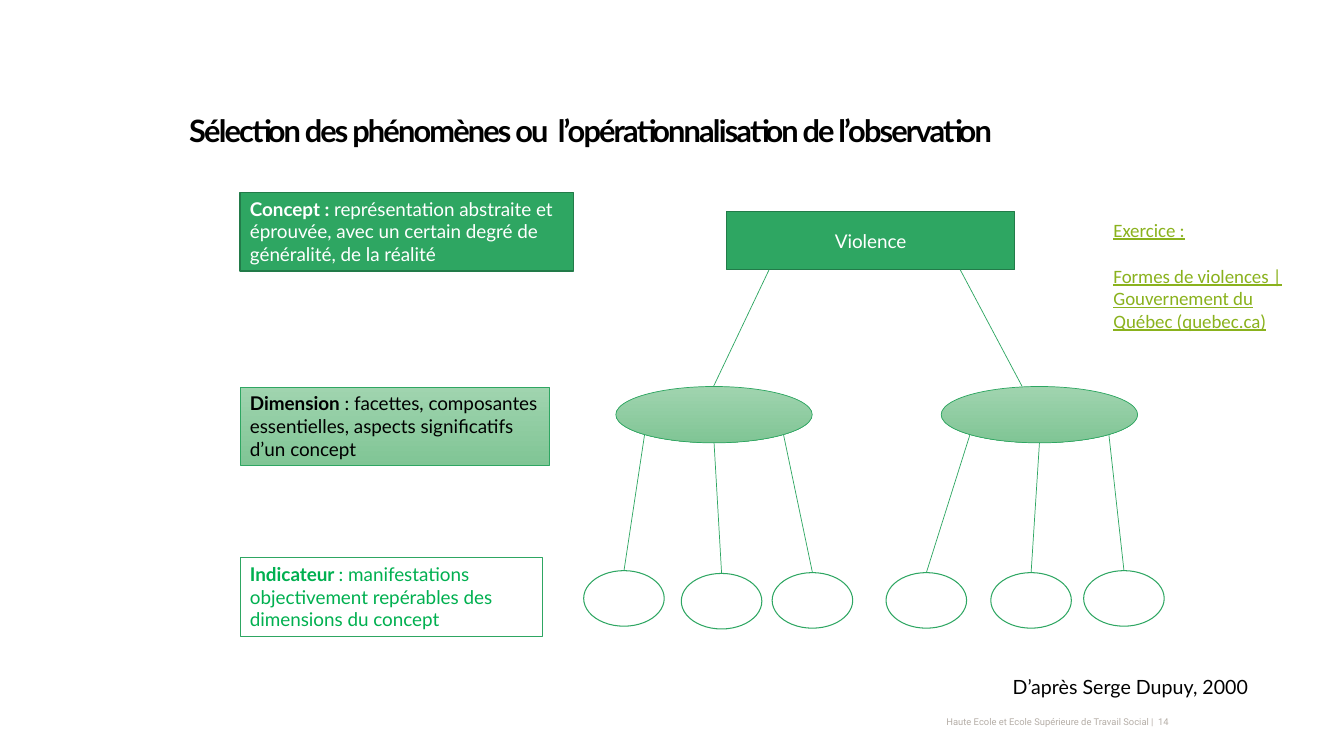
from math import sqrt
from pptx import Presentation
from pptx import util as u
from pptx.dml.color import RGBColor
from pptx.enum import shapes as sh, text as tx
from lxml import etree

THEME = {
    "green": "2EA662", "edge": "227B49", "top": "A0D4AF", "low": "80C595",
    "mark": "00B050", "link": "8AB21D", "pale": "B5AEA7",
    "ink": "000000", "white": "FFFFFF",
    "title": 22, "body": 13.5, "credit": 14, "foot": 6.7,
    "font": "Lato", "linkfont": "Calibri", "footfont": "Roboto",
}
T = THEME

TITLE = "Sélection des phénomènes ou  l’opérationnalisation de l’observation"
LEVELS = [
    ("Concept : ", "représentation abstraite et éprouvée, avec un certain degré de généralité, de la réalité",
     4.85, 8.41, "solid", "white"),
    ("Dimension", " : facettes, composantes essentielles, aspects significatifs d’un concept",
     9.75, 7.8, "fade", "ink"),
    ("Indicateur ", ": manifestations objectivement repérables des dimensions du concept",
     14.05, 7.62, "open", "mark"),
]
ROOT = ("Violence", (18.31, 5.33, 7.26, 1.47))
BRANCHES = [
    {"at": (15.52, 9.74), "stem": (19.38, 17.98),
     "leaves": [(14.71, 14.38), (17.17, 14.45), (19.46, 14.43)]},
    {"at": (23.72, 9.74), "stem": (24.2, 25.76),
     "leaves": [(22.33, 14.43), (24.97, 14.43), (27.31, 14.38)]},
]
EXERCISE = ["Exercice :", "Formes de violences | Gouvernement du Québec (quebec.ca)"]
CREDIT = "D’après Serge Dupuy, 2000"
FOOTER = "Haute Ecole et Ecole Supérieure de Travail Social |  14"
OVAL = (4.95, 1.42)
LEAF = (2.03, 1.4)
LOOKS = {"solid": ("edge", 1), "fade": ("green", 0.5), "open": ("green", 0.75)}

deck = Presentation()
deck.slide_width, deck.slide_height = u.Cm(33.87), u.Cm(19.05)
slide = deck.slides.add_slide(deck.slide_layouts[6])


def hue(name):
    return RGBColor.from_string(T[name])


def write(shape, paras, size="body", color="ink", font="font", align="LEFT",
          anchor="TOP", inset=None, under=None, track=None, gap=0, pitch=None):
    frame = shape.text_frame
    frame.word_wrap = True
    frame.vertical_anchor = tx.MSO_ANCHOR[anchor]
    if inset:
        frame.margin_left = frame.margin_right = u.Cm(inset[0])
        frame.margin_top = frame.margin_bottom = u.Cm(inset[1])
    for i, runs in enumerate(paras):
        para = frame.add_paragraph() if i else frame.paragraphs[0]
        para.alignment = tx.PP_ALIGN[align]
        if i and gap:
            para.space_before = u.Pt(gap)
        if pitch:
            para.line_spacing = u.Pt(pitch)
        for words, bold in runs:
            run = para.add_run()
            run.text = words
            face = run.font
            face.name, face.size, face.bold = T[font], u.Pt(T[size]), bold
            face.underline = under
            face.color.rgb = hue(color)
            if track:
                run._r.get_or_add_rPr().set("spc", str(track))


def label(box, paras, **form):
    write(slide.shapes.add_textbox(*map(u.Cm, box)), paras, **form)


def draw(kind, box, look):
    shape = slide.shapes.add_shape(sh.MSO_SHAPE[kind], *map(u.Cm, box))
    shape.shadow.inherit = False
    if look == "solid":
        shape.fill.solid()
        shape.fill.fore_color.rgb = hue("green")
    elif look == "fade":
        shape.fill.gradient()
        shape.fill.gradient_angle = 270
        for stop, name in zip(shape.fill.gradient_stops, ("top", "low")):
            stop.color.rgb = hue(name)
    else:
        shape.fill.background()
    edge, width = LOOKS[look]
    shape.line.color.rgb = hue(edge)
    shape.line.width = u.Pt(width)
    return shape


def link(start, end):
    line = slide.shapes.add_connector(
        sh.MSO_CONNECTOR.STRAIGHT, *map(u.Cm, start + end))
    line.line.color.rgb = hue("green")
    line.line.width = u.Pt(0.5)
    props = line._element.spPr
    etree.SubElement(props, props.tag.replace("}spPr", "}effectLst").replace(
        "presentationml", "drawingml").replace("2006/main", "2006/main"))


label((4.52, 2.69, 27.08, 2.67), [[(TITLE, True)]], size="title", track=-130)
for head, rest, top, width, look, color in LEVELS:
    write(draw("RECTANGLE", (6.05, top, width, 1.98), look),
          [[(head, True), (rest, False)]], color=color)

name, box = ROOT
write(draw("RECTANGLE", box, "solid"), [[(name, False)]],
      color="white", align="CENTER", anchor="MIDDLE")
base = box[1] + box[3]

for branch in BRANCHES:
    left, top = branch["at"]
    wide, high = OVAL
    draw("OVAL", (left, top, wide, high), "fade")
    near, far = branch["stem"]
    link((near, base), (far, top))
    for side, (x, y) in zip((-1, 0, 1), branch["leaves"]):
        draw("OVAL", (x, y) + LEAF, "open")
        drop = 1 / sqrt(2) if side else 1
        start = (left + wide / 2 * (1 + side * drop), top + high / 2 * (1 + drop))
        link(start, (x + LEAF[0] / 2, y))

label((27.81, 5.38, 5.59, 3.15), [[(words, False)] for words in EXERCISE],
      color="link", font="linkfont", under=True, gap=16.5)
label((25.27, 16.87, 6.55, 0.86), [[(CREDIT, False)]], size="credit")
label((21.44, 18.03, 8.36, 0.36), [[(FOOTER, False)]], size="foot", color="pale",
      font="footfont", align="RIGHT", anchor="MIDDLE", inset=(0.33, 0.18), pitch=7)

deck.save("out.pptx")
